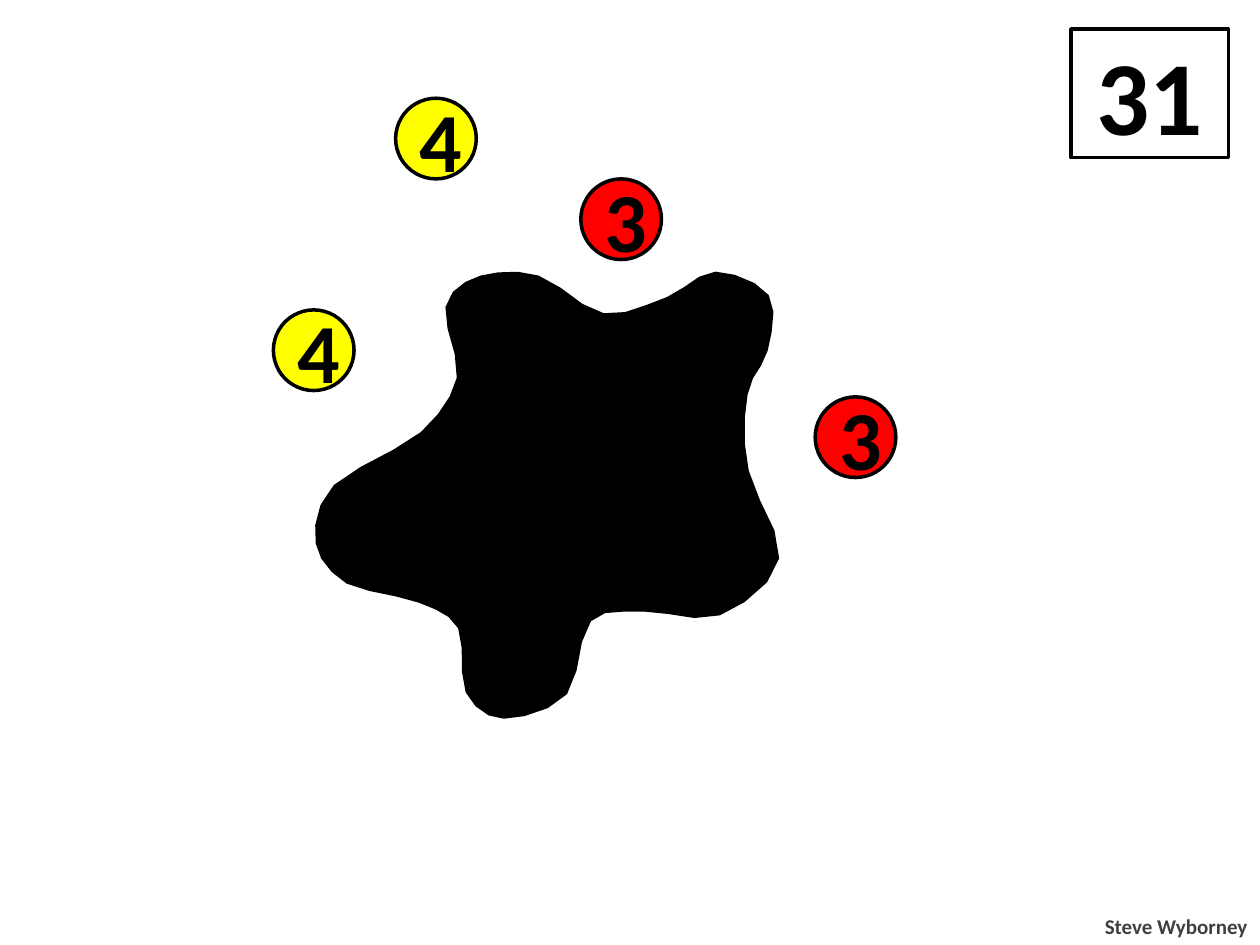
from pptx import Presentation
from pptx import util as u
from pptx.dml.color import RGBColor
from pptx.enum import shapes, text

EMU_PER_PX = 9144  # 100 px to the inch
COUNTER_SIZE = 64
CURVE_STEPS = 3

COUNTERS = [
    (647, 315, "3", "FF0000"),
    (461, 142, "3", "FF0000"),
    (314, 78, "4", "FFFF00"),
    (217, 246, "4", "FFFF00"),
]

SPLAT_START = (276, 462)
# Each curve: two control points, then the end point.
SPLAT_CURVES = [
    ((263, 454), (254, 443), (252, 431)),
    ((250, 418), (252, 401), (266, 386)),
    ((280, 372), (319, 358), (335, 344)),
    ((351, 329), (360, 316), (364, 300)),
    ((367, 283), (352, 257), (355, 244)),
    ((358, 230), (370, 224), (382, 220)),
    ((394, 217), (411, 215), (427, 220)),
    ((444, 225), (462, 248), (479, 250)),
    ((496, 253), (515, 242), (530, 237)),
    ((545, 231), (555, 217), (568, 217)),
    ((581, 217), (602, 225), (609, 235)),
    ((616, 245), (611, 265), (608, 278)),
    ((605, 291), (594, 297), (592, 313)),
    ((589, 329), (588, 353), (593, 374)),
    ((597, 396), (621, 424), (617, 443)),
    ((614, 462), (589, 480), (571, 487)),
    ((553, 494), (528, 483), (511, 484)),
    ((494, 485), (478, 481), (468, 492)),
    ((457, 503), (460, 537), (449, 550)),
    ((438, 563), (413, 569), (400, 569)),
    ((388, 569), (377, 561), (371, 549)),
    ((365, 537), (371, 510), (365, 498)),
    ((358, 486), (348, 483), (333, 477)),
    ((318, 471), (290, 469), SPLAT_START),
]


def px(length):
    return u.Emu(round(length * EMU_PER_PX))


def color(hex_string):
    return RGBColor.from_string(hex_string)


def write(frame, words, size, ink="000000", align=text.PP_ALIGN.CENTER):
    paragraph = frame.paragraphs[0]
    paragraph.alignment = align
    run = paragraph.add_run()
    run.text = words
    run.font.color.rgb = color(ink)
    font_format = {"name": "Calibri", "size": u.Pt(size), "bold": True}
    for name, value in font_format.items():
        setattr(run.font, name, value)


def paint(shape, fill):
    """Give a shape its flat fill and the black 2 pt outline."""
    shape.shadow.inherit = False
    shape.fill.solid()
    shape.fill.fore_color.rgb = color(fill)
    shape.line.color.rgb = color("000000")
    shape.line.width = u.Pt(2)


def add_label(slide, preset, box, words, size, fill):
    label = slide.shapes.add_shape(preset, *map(px, box))
    paint(label, fill)
    label.text_frame.vertical_anchor = text.MSO_ANCHOR.MIDDLE
    write(label.text_frame, words, size)


def add_author(slide):
    author = slide.shapes.add_textbox(px(866), px(720), px(134), px(30))
    frame_format = {"word_wrap": False,
                    "auto_size": text.MSO_AUTO_SIZE.SHAPE_TO_FIT_TEXT}
    for name, value in frame_format.items():
        setattr(author.text_frame, name, value)
    write(author.text_frame, "Steve Wyborney", 12, "404040",
          text.PP_ALIGN.RIGHT)


def curve_points(start, first, second, end):
    """Points along a cubic Bezier curve, without its start."""
    points = []
    for step in range(1, CURVE_STEPS + 1):
        t = step / CURVE_STEPS
        weights = ((1 - t) ** 3, 3 * t * (1 - t) ** 2,
                   3 * t ** 2 * (1 - t), t ** 3)
        points.append(tuple(
            px(sum(w * c for w, c in zip(weights, axis)))
            for axis in zip(start, first, second, end)))
    return points


def add_splat(slide):
    outline = []
    start = SPLAT_START
    for curve in SPLAT_CURVES:
        outline += curve_points(start, *curve)
        start = curve[-1]
    builder = slide.shapes.build_freeform(*map(px, SPLAT_START))
    builder.add_line_segments(outline[:-1], close=True)
    paint(builder.convert_to_shape(), "000000")


def main():
    deck = Presentation()
    deck.slide_width, deck.slide_height = px(1000), px(750)
    slide = deck.slides.add_slide(deck.slide_layouts[6])
    preset = shapes.MSO_SHAPE

    add_label(slide, preset.RECTANGLE, (850, 23, 125, 102), "31", 60, "FFFFFF")
    add_author(slide)
    for left, top, number, fill in COUNTERS:
        add_label(slide, preset.OVAL, (left, top, COUNTER_SIZE, COUNTER_SIZE),
                  number, 48, fill)
    add_splat(slide)

    deck.save("out.pptx")


if __name__ == "__main__":
    main()
